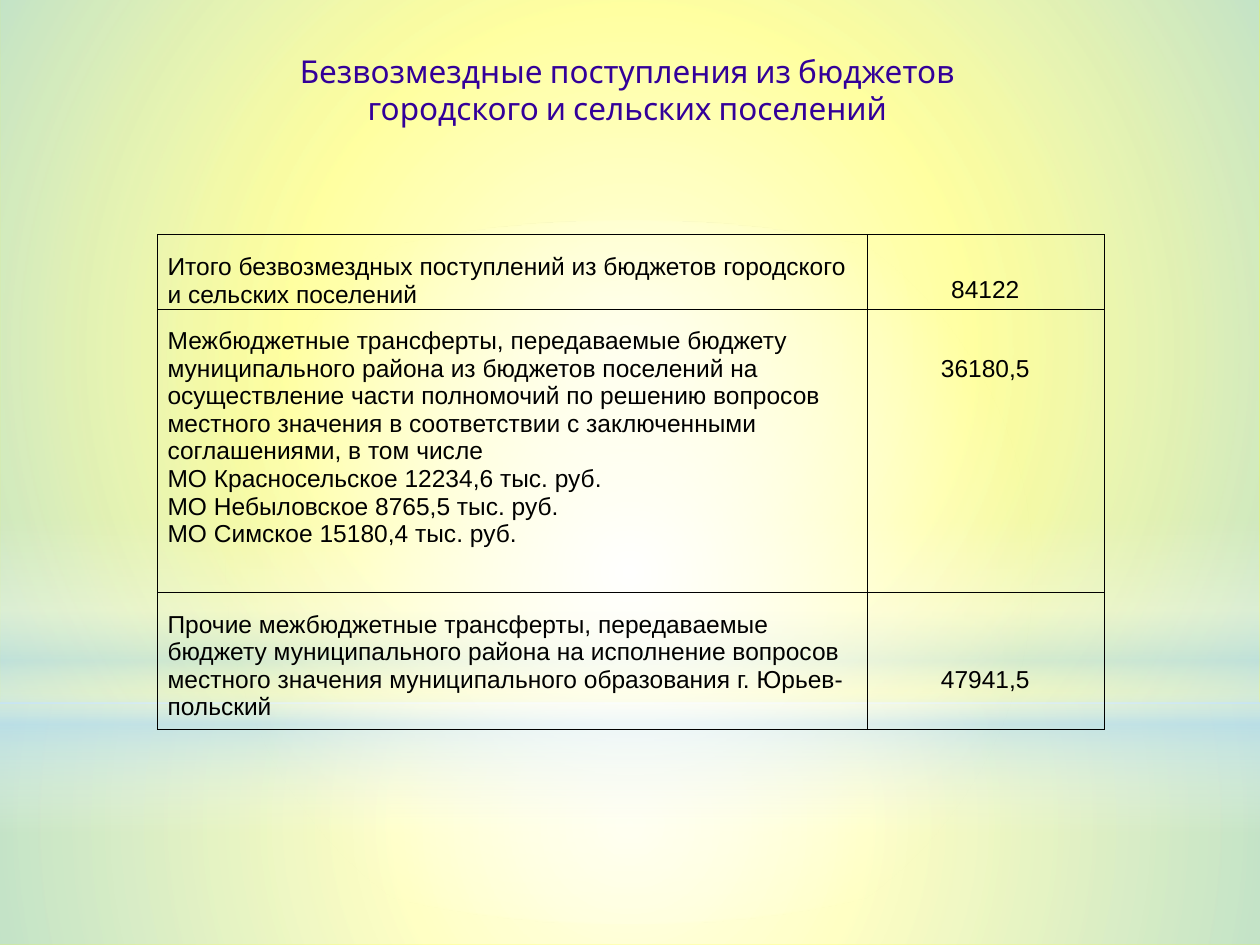
from lxml import etree
from pptx import Presentation
from pptx.dml.color import RGBColor
from pptx.enum import shapes, text
from pptx.oxml import ns
from pptx.util import Inches, Pt

COLORS = {"page": "FFFF00", "white": "FFFFFF", "sky": "B4DCFA",
          "title": "330099", "body": "000000"}

TITLE = ["Безвозмездные поступления из бюджетов",
         "городского и сельских поселений"]

# row height, top margin, lines above the amount, description, amount
ROWS = [
    (0.59, 0.11, 1,
     ["Итого безвозмездных поступлений из бюджетов городского и сельских поселений"],
     "84122"),
    (2.25, 0.15, 1,
     ["Межбюджетные трансферты, передаваемые бюджету муниципального района "
      "из бюджетов поселений на осуществление части полномочий по решению "
      "вопросов местного значения в соответствии с заключенными соглашениями, "
      "в том числе",
      "МО Красносельское 12234,6 тыс. руб.",
      "МО Небыловское 8765,5 тыс. руб.",
      "МО Симское 15180,4 тыс. руб."],
     "36180,5"),
    (1.09, 0.15, 2,
     ["Прочие межбюджетные трансферты, передаваемые бюджету муниципального "
      "района на исполнение вопросов местного значения муниципального "
      "образования г. Юрьев-польский"],
     "47941,5"),
]
COLUMNS = [5.63, 1.88]
LINE_HEIGHT = 0.22

# kind, place, radial or not, gradient stops (position %, colour, opacity %)
RECT, OVAL = shapes.MSO_SHAPE.RECTANGLE, shapes.MSO_SHAPE.OVAL
BACKDROP = [
    (RECT, (0, 5.58, 10, 1.92), True,
     [(0, "white", 91), (37, "white", 76), (100, "sky", 79)]),
    (RECT, (0, 0, 10, 5.58), True,
     [(0, "white", 89), (48, "white", 62), (100, "sky", 79)]),
    (RECT, (0, 4.12, 10, 2.5), False,
     [(0, "white", 0), (29, "white", 30), (45, "sky", 40),
      (55, "white", 26), (65, "sky", 60), (100, "white", 0)]),
    (OVAL, (0, 1.75, 10, 5.58), True, [(0, "white", 100), (56, "white", 0)]),
]


def add(parent, tag, **attributes):
    values = {name: str(value) for name, value in attributes.items()}
    return etree.SubElement(parent, ns.qn(tag), values)


def add_backdrop(page, kind, place, radial, stops):
    shape = page.shapes.add_shape(kind, *map(Inches, place))
    shape.shadow.inherit = False
    shape.line.fill.background()
    shape.fill.background()
    properties = shape.element.spPr
    gradient = etree.Element(ns.qn("a:gradFill"), rotWithShape="1")
    properties.replace(properties.find(ns.qn("a:noFill")), gradient)
    stop_list = add(gradient, "a:gsLst")
    for position, color, opacity in stops:
        stop = add(stop_list, "a:gs", pos=position * 1000)
        rgb = add(stop, "a:srgbClr", val=COLORS[color])
        add(rgb, "a:alpha", val=opacity * 1000)
    if radial:
        circle = add(gradient, "a:path", path="circle")
        add(circle, "a:fillToRect", l=50000, t=50000, r=50000, b=50000)
    else:
        add(gradient, "a:lin", ang=90 * 60000, scaled=0)


def write(frame, lines, align, font, size, color):
    for index, line in enumerate(lines):
        para = frame.paragraphs[0] if index == 0 else frame.add_paragraph()
        para.alignment = align
        span = para.add_run()
        span.text = line
        for name, value in {"name": font, "size": Pt(size)}.items():
            setattr(span.font, name, value)
        span.font.color.rgb = RGBColor.from_string(COLORS[color])


def add_borders(cell):
    properties = cell.fill._xPr
    for index, side in enumerate(("a:lnL", "a:lnR", "a:lnT", "a:lnB")):
        line = etree.Element(ns.qn(side), w=str(Pt(0.06)))
        add(add(line, "a:solidFill"), "a:srgbClr", val=COLORS["body"])
        properties.insert(index, line)


def add_title(page):
    box = page.shapes.add_textbox(*map(Inches, (-0.04, 0.36, 10.04, 0.71)))
    box.text_frame.word_wrap = True
    write(box.text_frame, TITLE, text.PP_ALIGN.CENTER, "Cabin", 18, "title")


def add_transfers_table(page):
    height = sum(row[0] for row in ROWS)
    table = page.shapes.add_table(
        len(ROWS), len(COLUMNS), Inches(1.25), Inches(1.86),
        Inches(sum(COLUMNS)), Inches(height)).table
    table.first_row = table.horz_banding = False
    for column, width in zip(table.columns, COLUMNS):
        column.width = Inches(width)
    for row, (height, top, skipped, description, amount) in zip(table.rows, ROWS):
        row.height = Inches(height)
        contents = [(description, text.PP_ALIGN.LEFT, top),
                    ([amount], text.PP_ALIGN.CENTER, top + skipped * LINE_HEIGHT)]
        for cell, (lines, align, margin) in zip(row.cells, contents):
            cell.fill.background()
            add_borders(cell)
            layout = {"margin_left": 0.08, "margin_right": 0.08,
                      "margin_top": margin, "margin_bottom": 0}
            for name, value in layout.items():
                setattr(cell, name, Inches(value))
            cell.vertical_anchor = text.MSO_ANCHOR.TOP
            write(cell.text_frame, lines, align, "Arial", 14, "body")
    table.cell(0, 0).vertical_anchor = text.MSO_ANCHOR.BOTTOM


def main():
    deck = Presentation()
    deck.slide_width, deck.slide_height = Inches(10), Inches(7.5)
    page = deck.slides.add_slide(deck.slide_layouts[6])
    page.background.fill.solid()
    page.background.fill.fore_color.rgb = RGBColor.from_string(COLORS["page"])
    for layer in BACKDROP:
        add_backdrop(page, *layer)
    add_title(page)
    add_transfers_table(page)
    deck.save("out.pptx")


if __name__ == "__main__":
    main()
